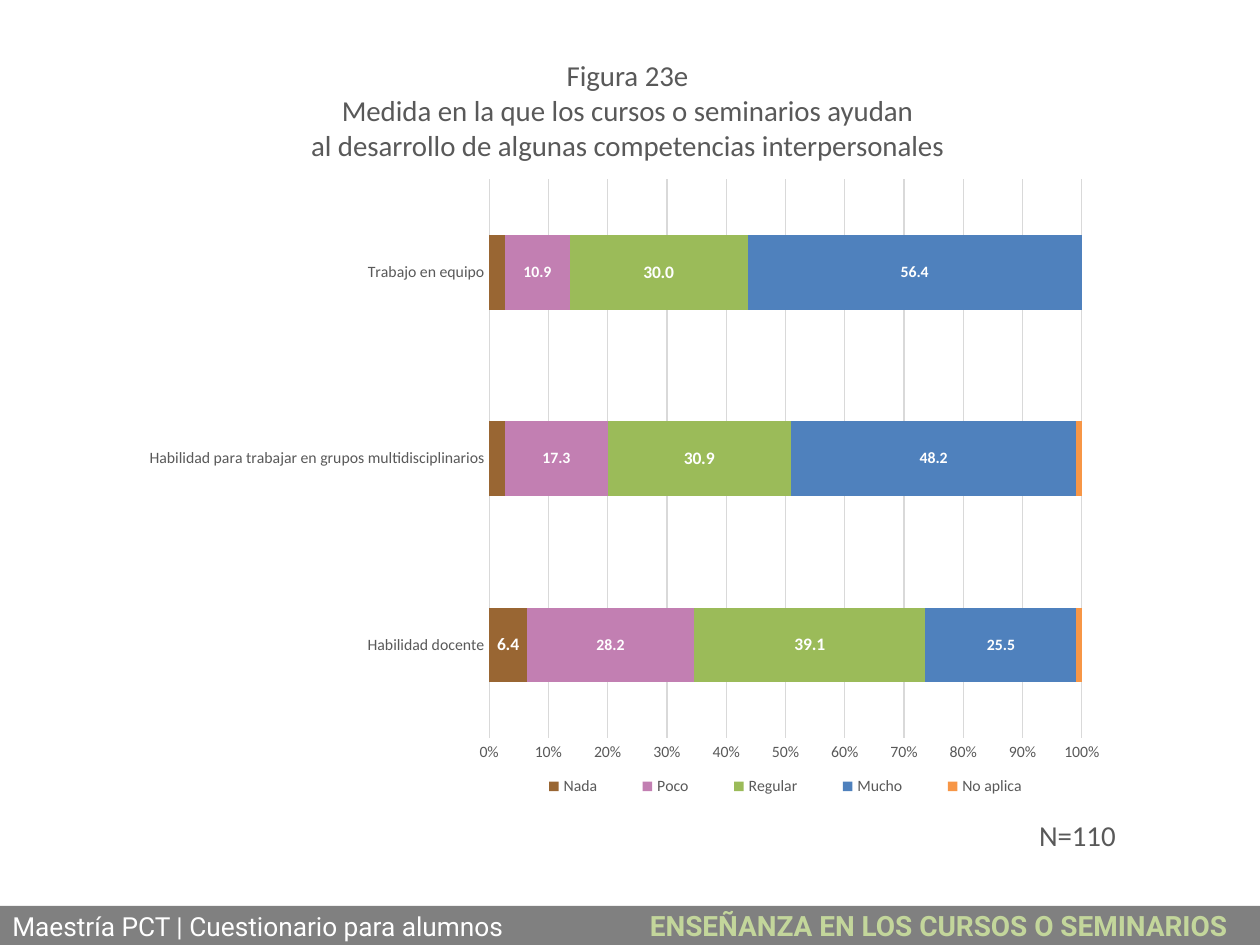
from dataclasses import dataclass

from lxml.etree import SubElement
from pptx import Presentation
from pptx.chart.chart import Chart
from pptx.chart.data import CategoryChartData
from pptx.dml.color import RGBColor
from pptx.enum.chart import XL_CHART_TYPE as ChartType
from pptx.enum.chart import XL_LEGEND_POSITION as LegendPosition
from pptx.enum.chart import XL_TICK_MARK as TickMark
from pptx.enum.shapes import MSO_SHAPE as ShapeKind
from pptx.enum.text import MSO_ANCHOR as Anchor
from pptx.enum.text import MSO_AUTO_SIZE as AutoSize
from pptx.enum.text import PP_ALIGN as Align
from pptx.oxml.ns import qn
from pptx.slide import Slide
from pptx.text.text import Font
from pptx.util import Inches, Pt

COLORS = {
    "text": "595959",
    "grid": "D9D9D9",
    "white": "FFFFFF",
    "bar": "808080",
    "section": "C3D69B",
    "nada": "996633",
    "poco": "C27FB2",
    "regular": "9BBB59",
    "mucho": "4F81BD",
    "no_aplica": "F79646",
}
NUMBER_FORMAT = "###0.0"
CATEGORIES = (
    "Habilidad docente",
    "Habilidad para trabajar en grupos multidisciplinarios",
    "Trabajo en equipo",
)
TITLE_LINES = (
    "Figura 23e",
    "Medida en la que los cursos o seminarios ayudan",
    "al desarrollo de algunas competencias interpersonales",
)


@dataclass(frozen=True)
class Answer:
    name: str
    values: tuple[float, ...]
    color: str
    labelled: tuple[int, ...] = ()
    label_size: float = 9


ANSWERS = (
    Answer("Nada", (6.4, 2.7, 2.7), "nada", (0,), 10),
    Answer("Poco", (28.2, 17.3, 10.9), "poco", (0, 1, 2)),
    Answer("Regular", (39.1, 30.9, 30.0), "regular", (0, 1, 2), 10),
    Answer("Mucho", (25.5, 48.2, 56.4), "mucho", (0, 1, 2)),
    Answer("No aplica", (0.9, 0.9, 0.0), "no_aplica"),
)


def rgb(color: str) -> RGBColor:
    return RGBColor.from_string(COLORS[color])


def style_font(font: Font, size: float, color: str = "text",
               name: str = "Calibri", bold: bool = False) -> None:
    font.name = name
    font.size = Pt(size)
    font.bold = bold
    font.color.rgb = rgb(color)


def add_title(slide: Slide) -> None:
    title = slide.shapes.title
    title.left, title.top = Inches(1.06), Inches(0.41)
    title.width, title.height = Inches(7.84), Inches(1.21)
    frame = title.text_frame
    frame.text = "\n".join(TITLE_LINES)
    frame.word_wrap = True
    frame.auto_size = AutoSize.NONE
    frame.vertical_anchor = Anchor.TOP
    for paragraph in frame.paragraphs:
        paragraph.alignment = Align.CENTER
        style_font(paragraph.runs[0].font, 16.5)


def set_layout(parent, index: int, inner: bool, **fractions: float) -> None:
    """Place a plot area or legend by fractions of the chart's size."""
    for old in parent.findall(qn("c:layout")):
        parent.remove(old)
    layout = SubElement(parent, qn("c:layout"))
    parent.insert(index, layout)
    manual = SubElement(layout, qn("c:manualLayout"))
    settings = {"layoutTarget": "inner"} if inner else {}
    settings |= {"xMode": "edge", "yMode": "edge"} | fractions
    for tag, value in settings.items():
        SubElement(manual, qn(f"c:{tag}")).set("val", str(value))


def style_axes(chart: Chart) -> None:
    for axis in (chart.category_axis, chart.value_axis):
        axis.major_tick_mark = axis.minor_tick_mark = TickMark.NONE
        style_font(axis.tick_labels.font, 9)
    category_line = chart.category_axis.format.line
    chart.category_axis.has_major_gridlines = False
    value_axis = chart.value_axis
    value_axis.has_major_gridlines = True
    for line in (category_line, value_axis.major_gridlines.format.line):
        line.color.rgb = rgb("grid")
        line.width = Pt(0.75)
    value_axis.format.line.fill.background()
    value_axis.minimum_scale, value_axis.maximum_scale = 0, 1
    value_axis.major_unit = 0.1
    value_axis.tick_labels.number_format = "0%"
    value_axis.tick_labels.number_format_is_linked = False


def style_series(series, answer: Answer) -> None:
    series.format.fill.solid()
    series.format.fill.fore_color.rgb = rgb(answer.color)
    labels = series.data_labels
    labels.show_value = len(answer.labelled) == len(CATEGORIES)
    labels.number_format = NUMBER_FORMAT
    labels.number_format_is_linked = False
    style_font(labels.font, answer.label_size, "white", bold=True)
    if not labels.show_value:
        for index in answer.labelled:
            style_font(series.points[index].data_label.font,
                       answer.label_size, "white", bold=True)


def add_answer_chart(slide: Slide) -> None:
    data = CategoryChartData(number_format=NUMBER_FORMAT)
    data.categories = CATEGORIES
    for answer in ANSWERS:
        data.add_series(answer.name, answer.values)
    chart = slide.shapes.add_chart(
        ChartType.BAR_STACKED_100, Inches(1.06), Inches(1.32),
        Inches(7.84), Inches(5.1), data).chart
    chart.has_title = False
    chart.font.name, chart.font.size = "Calibri", Pt(10)
    plot = chart.plots[0]
    plot.gap_width, plot.overlap = 150, 100
    plot.vary_by_categories = False
    for series, answer in zip(plot.series, ANSWERS):
        style_series(series, answer)
    style_axes(chart)
    chart.has_legend = True
    legend = chart.legend
    legend.position = LegendPosition.BOTTOM
    legend.include_in_layout = False
    style_font(legend.font, 9)
    plot_area = chart.element.find(f".//{qn('c:plotArea')}")
    set_layout(plot_area, 0, True, x=0.36, y=0.02, w=0.6, h=0.87)
    legend_element = chart.element.find(f".//{qn('c:legend')}")
    set_layout(legend_element, 1, False, x=0.38, y=0.94, w=0.56, h=0.05)


def add_sample_size(slide: Slide) -> None:
    box = slide.shapes.add_textbox(
        Inches(8.14), Inches(6.44), Inches(0.82), Inches(0.38))
    frame = box.text_frame
    frame.text = "N=110"
    frame.word_wrap = False
    frame.paragraphs[0].alignment = Align.CENTER
    style_font(frame.paragraphs[0].runs[0].font, 16.5)


def add_footer(slide: Slide) -> None:
    bar = slide.shapes.add_shape(
        ShapeKind.RECTANGLE, 0, Inches(7.19), Inches(10), Inches(0.31))
    bar.shadow.inherit = False
    bar.fill.solid()
    bar.fill.fore_color.rgb = rgb("bar")
    bar.line.fill.background()
    bar.text_frame.vertical_anchor = Anchor.MIDDLE
    paragraph = bar.text_frame.paragraphs[0]
    paragraph.alignment = Align.LEFT
    tabs = SubElement(paragraph._p.get_or_add_pPr(), qn("a:tabLst"))
    tab = SubElement(tabs, qn("a:tab"))
    tab.set("pos", str(Inches(5.06)))
    tab.set("algn", "l")
    course, section = paragraph.add_run(), paragraph.add_run()
    course.text = "Maestría PCT | Cuestionario para alumnos\t"
    section.text = "ENSEÑANZA EN LOS CURSOS O SEMINARIOS"
    style_font(course.font, 15, "white", "Roboto")
    style_font(section.font, 16, "section", "Roboto", bold=True)


def main() -> None:
    presentation = Presentation()
    presentation.slide_width = Inches(10)
    presentation.slide_height = Inches(7.5)
    slide = presentation.slides.add_slide(presentation.slide_layouts[5])
    add_sample_size(slide)
    add_footer(slide)
    add_answer_chart(slide)
    add_title(slide)
    presentation.save("out.pptx")


if __name__ == "__main__":
    main()
